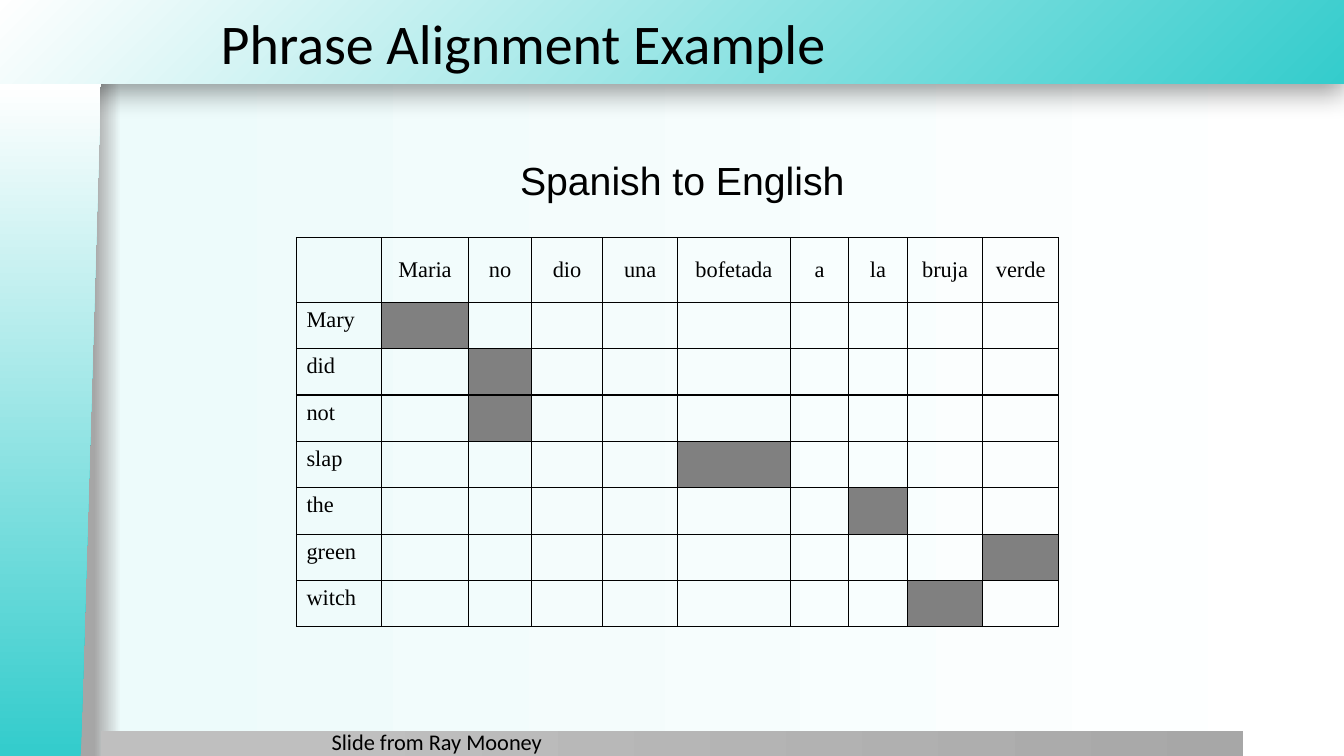
from dataclasses import dataclass

from lxml import etree
from pptx import Presentation
from pptx.dml.color import RGBColor
from pptx.enum.shapes import MSO_SHAPE as Shape
from pptx.enum.text import MSO_ANCHOR as Anchor, PP_ALIGN as Align
from pptx.oxml import parse_xml
from pptx.oxml.ns import nsdecls, qn
from pptx.util import Inches, Pt


@dataclass(frozen=True)
class Theme:
    teal: str = "34CCCC"
    white: str = "FFFFFF"
    text: str = "000000"
    aligned: str = "808080"
    title: tuple = ("Calibri", 40)
    subtitle: tuple = ("Arial", 28)
    table: tuple = ("Times New Roman", 16)
    credit: tuple = ("Calibri", 16)


T = Theme()
SPANISH = ["Maria", "no", "dio", "una", "bofetada", "a", "la", "bruja", "verde"]
# Each English word with the Spanish word it aligns to
ALIGNMENT = [("Mary", "Maria"), ("did", "no"), ("not", "no"), ("slap", "bofetada"),
             ("the", "la"), ("green", "verde"), ("witch", "bruja")]
COLUMNS = [0.84, 0.87, 0.62, 0.71, 0.74, 1.12, 0.58, 0.58, 0.75, 0.75]
HEADER_HEIGHT, ROW_HEIGHT = 0.64, 0.46
LINEAR = '<a:lin ang="0" scaled="0"/>'
FROM_CORNER = '<a:path path="circle"><a:fillToRect l="100000" t="100000"/></a:path>'


def box(*lengths):
    return [Inches(v) for v in lengths]


def set_gradient(fill, parent, stops, direction=LINEAR):
    """Swap a solid fill for a gradient with any number of stops."""
    fill.solid()
    fill.fore_color.rgb = RGBColor.from_string(stops[0][1])
    marks = "".join(f'<a:gs pos="{pos * 1000}"><a:srgbClr val="{color}"/></a:gs>'
                    for pos, color in stops)
    solid = parent.find(qn("a:solidFill"))
    parent.replace(solid, parse_xml(
        f'<a:gradFill {nsdecls("a")} rotWithShape="1">'
        f"<a:gsLst>{marks}</a:gsLst>{direction}</a:gradFill>"))


def add_band(s, kind, at, stops, direction=LINEAR):
    sp = s.shapes.add_shape(kind, *box(*at))
    sp.shadow.inherit = False
    sp.line.fill.background()
    set_gradient(sp.fill, sp._element.spPr, stops, direction)
    return sp


def add_shadow(sp):
    effects = sp._element.spPr.find(qn("a:effectLst"))
    effects.append(parse_xml(
        f'<a:outerShdw {nsdecls("a")} blurRad="{Pt(20)}" dist="{Pt(6)}" dir="5400000" '
        'algn="t" rotWithShape="0"><a:srgbClr val="000000"><a:alpha val="40000"/>'
        "</a:srgbClr></a:outerShdw>"))


def write(tf, text, style, align=Align.LEFT):
    p = tf.paragraphs[0]
    p.alignment = align
    r = p.add_run()
    r.text = text
    name, size = style
    for key, value in {"name": name, "size": Pt(size)}.items():
        setattr(r.font, key, value)
    r.font.color.rgb = RGBColor.from_string(T.text)


def add_text(s, at, text, style, **frame):
    tf = s.shapes.add_textbox(*box(*at)).text_frame
    for key, value in {"word_wrap": True, **frame}.items():
        setattr(tf, key, value)
    write(tf, text, style)


def add_borders(cell):
    tcPr = cell._tc.get_or_add_tcPr()
    for i, side in enumerate("LRTB"):
        line = etree.Element(qn(f"a:ln{side}"), w=str(Pt(1)))
        color = etree.SubElement(etree.SubElement(line, qn("a:solidFill")), qn("a:srgbClr"))
        color.set("val", T.text)
        tcPr.insert(i, line)


def add_alignment_table(s, left, top):
    heights = [HEADER_HEIGHT] + [ROW_HEIGHT] * len(ALIGNMENT)
    table = s.shapes.add_table(len(heights), len(COLUMNS),
                               *box(left, top, sum(COLUMNS), sum(heights))).table
    table.first_row = table.horz_banding = False
    for column, width in zip(table.columns, COLUMNS):
        column.width = Inches(width)
    for row, height in zip(table.rows, heights):
        row.height = Inches(height)
    for cell in table.iter_cells():
        cell.fill.background()
        add_borders(cell)

    # Header words
    for col, word in enumerate(SPANISH, 1):
        cell = table.cell(0, col)
        cell.vertical_anchor = Anchor.MIDDLE
        write(cell.text_frame, word, T.table, Align.CENTER)

    # Row words and aligned cells
    for row, (english, spanish) in enumerate(ALIGNMENT, 1):
        write(table.cell(row, 0).text_frame, english, T.table)
        match = table.cell(row, SPANISH.index(spanish) + 1)
        match.fill.solid()
        match.fill.fore_color.rgb = RGBColor.from_string(T.aligned)


def main():
    prs = Presentation()
    prs.slide_width, prs.slide_height = box(13.33, 7.5)
    s = prs.slides.add_slide(prs.slide_layouts[6])

    # Background
    fill = s.background.fill
    fill.solid()
    set_gradient(fill, s._element.find(".//" + qn("p:bgPr")),
                 [(7, "A6A6A6"), (9, "EDFBFB"), (100, T.white)])

    # Top, bottom and side bands
    top = add_band(s, Shape.RECTANGLE, (-0.01, 0, 13.34, 0.83),
                   [(0, T.teal), (100, T.white)], FROM_CORNER)
    add_shadow(top)
    add_band(s, Shape.RECTANGLE, (1, 7.25, 11.33, 0.26), [(20, "BFBFBF"), (100, "A7A7A7")])
    side = add_band(s, Shape.FLOWCHART_MANUAL_INPUT, (-2.84, 3.67, 6.68, 1),
                    [(1, T.teal), (100, T.white)])
    side.rotation = 270
    side._element.spPr.find(qn("a:xfrm")).set("flipV", "1")

    # Title, table and captions
    add_text(s, (2.09, 0, 11.25, 0.83), "Phrase Alignment Example", T.title,
             vertical_anchor=Anchor.MIDDLE)
    add_alignment_table(s, 2.94, 2.36)
    add_text(s, (5.06, 1.5, 3.46, 0.57), "Spanish to English", T.subtitle, word_wrap=False)
    add_text(s, (3.19, 7.17, 2.75, 0.33), "Slide from Ray Mooney", T.credit)

    prs.save("out.pptx")


if __name__ == "__main__":
    main()
